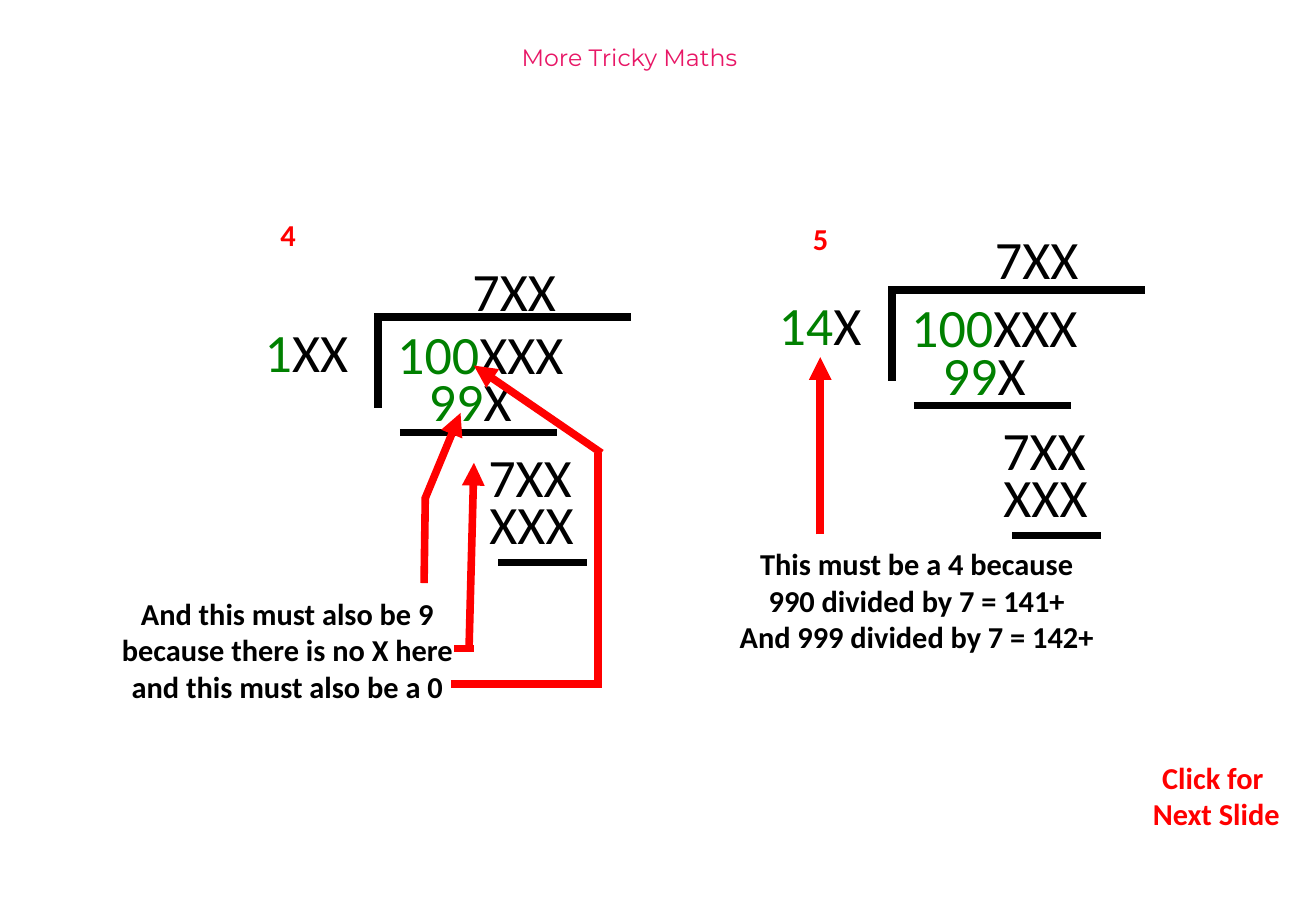
import itertools

import pptx
import pptx.dml.color
import pptx.enum.shapes
import pptx.enum.text
import pptx.oxml
import pptx.oxml.ns
import pptx.util
from pptx.util import Inches

RGBColor = pptx.dml.color.RGBColor
ALIGN = pptx.enum.text.PP_ALIGN
BLACK = RGBColor(0, 0, 0)
GREEN = RGBColor(0, 128, 0)
RED = RGBColor(255, 0, 0)
PINK = RGBColor(232, 23, 102)

TITLE = "More Tricky Maths"
SUMS = [
    {"origin": (3.11, 2.61), "known": "1", "unknown": "XX", "quotient": (3.79, 2.07)},
    {"origin": (7.34, 2.39), "known": "14", "unknown": "X", "quotient": (8.09, 1.81)},
]
WORKING = [
    (0.06, -0.02, 1.59, "100", "XXX"),
    (0.32, 0.37, 1, "99", "X"),
    (0.81, 0.99, 1, "", "7XX"),
    (0.82, 1.38, 1, "", "XXX"),
]
RULES = [
    ((0, 0), (0, 0.75)),
    ((-0.03, 0), (2.08, 0)),
    ((0.18, 0.95), (1.47, 0.95)),
    ((0.99, 2.02), (1.72, 2.02)),
]
NOTES = [
    ((2.21, 1.73, 0.32, 0.4), ["4"], RED, ALIGN.LEFT),
    ((6.59, 1.76, 0.32, 0.4), ["5"], RED, ALIGN.LEFT),
    ((0.89, 4.85, 2.95, 1.01),
     ["And this must also be 9", "because there is no X here", "and this must also be a 0"],
     BLACK, ALIGN.CENTER),
    ((5.97, 4.44, 3.15, 1.01),
     ["This must be a 4 because", "990 divided by 7 = 141+", "And 999 divided by 7 = 142+"],
     BLACK, ALIGN.CENTER),
    ((9.38, 6.2, 1.26, 0.71), ["Click for ", "Next Slide"], RED, ALIGN.CENTER),
]
STEMS = [
    ((3.49, 4.8), (3.5, 4.09)),
    ((3.74, 5.34), (3.9, 5.34)),
    ((3.71, 5.63), (4.95, 5.63)),
    ((4.92, 5.63), (4.92, 3.73)),
]
ARROWS = [
    ((3.5, 4.1), (3.79, 3.4)),
    ((3.86, 5.34), (3.9, 3.81)),
    ((4.95, 3.73), (3.9, 3.01)),
    ((6.75, 4.4), (6.75, 2.94)),
]


def apply(target, formats):
    for name, value in formats.items():
        setattr(target, name, value)


def add_span(para, text, size, color, bold=False, font="Calibri"):
    span = para.add_run()
    span.text = text
    apply(span.font, {"name": font, "size": pptx.util.Pt(size), "bold": bold})
    span.font.color.rgb = color


def add_text(page, bounds, lines, size, align=ALIGN.LEFT, bold=False):
    box = page.shapes.add_textbox(*map(Inches, bounds))
    frame = box.text_frame
    apply(frame, {"word_wrap": False,
                  "auto_size": pptx.enum.text.MSO_AUTO_SIZE.SHAPE_TO_FIT_TEXT})
    for index, spans in enumerate(lines):
        para = frame.add_paragraph() if index else frame.paragraphs[0]
        para.alignment = align
        for text, color in spans:
            if text:
                add_span(para, text, size, color, bold)


def add_line(page, start, end, color, arrow=False):
    line = page.shapes.add_connector(
        pptx.enum.shapes.MSO_CONNECTOR.STRAIGHT, *map(Inches, start + end))
    line.line.color.rgb = color
    line.line.width = pptx.util.Pt(4.5)
    if arrow:
        tip = pptx.oxml.parse_xml(
            f'<a:tailEnd {pptx.oxml.ns.nsdecls("a")} type="triangle"/>')
        line.line._get_or_add_ln().append(tip)
    line._element.spPr.append(
        pptx.oxml.parse_xml(f'<a:effectLst {pptx.oxml.ns.nsdecls("a")}/>'))


def add_title(page):
    title = page.shapes.title
    apply(title, {"left": Inches(3.96), "top": Inches(0.3),
                  "width": Inches(2.44), "height": Inches(0.58)})
    apply(title.text_frame, {"word_wrap": False,
                             "auto_size": pptx.enum.text.MSO_AUTO_SIZE.NONE,
                             "vertical_anchor": pptx.enum.text.MSO_ANCHOR.TOP})
    para = title.text_frame.paragraphs[0]
    para.alignment = ALIGN.CENTER
    add_span(para, TITLE, 14, PINK, font="Montserrat")


def add_sum(page, division):
    left, top = division["origin"]
    divisor = (-1.03, -0.04, 0.9, division["known"], division["unknown"])
    for x, y, width, known, unknown in [divisor] + WORKING:
        add_text(page, (left + x, top + y, width, 0.64),
                 [[(known, GREEN), (unknown, BLACK)]], 32)
    add_text(page, division["quotient"] + (0.9, 0.64), [[("7XX", BLACK)]], 32)
    for start, end in RULES:
        add_line(page, (left + start[0], top + start[1]),
                 (left + end[0], top + end[1]), BLACK)


def main():
    deck = pptx.Presentation()
    apply(deck, {"slide_width": Inches(10.83), "slide_height": Inches(7.5)})
    page = deck.slides.add_slide(deck.slide_layouts[5])
    add_title(page)
    for division in SUMS:
        add_sum(page, division)
    for bounds, lines, color, align in NOTES:
        add_text(page, bounds, [[(line, color)] for line in lines], 18, align, True)
    for index, (start, end) in enumerate(itertools.chain(STEMS, ARROWS)):
        add_line(page, start, end, RED, arrow=index >= len(STEMS))
    deck.save("out.pptx")


if __name__ == "__main__":
    main()
